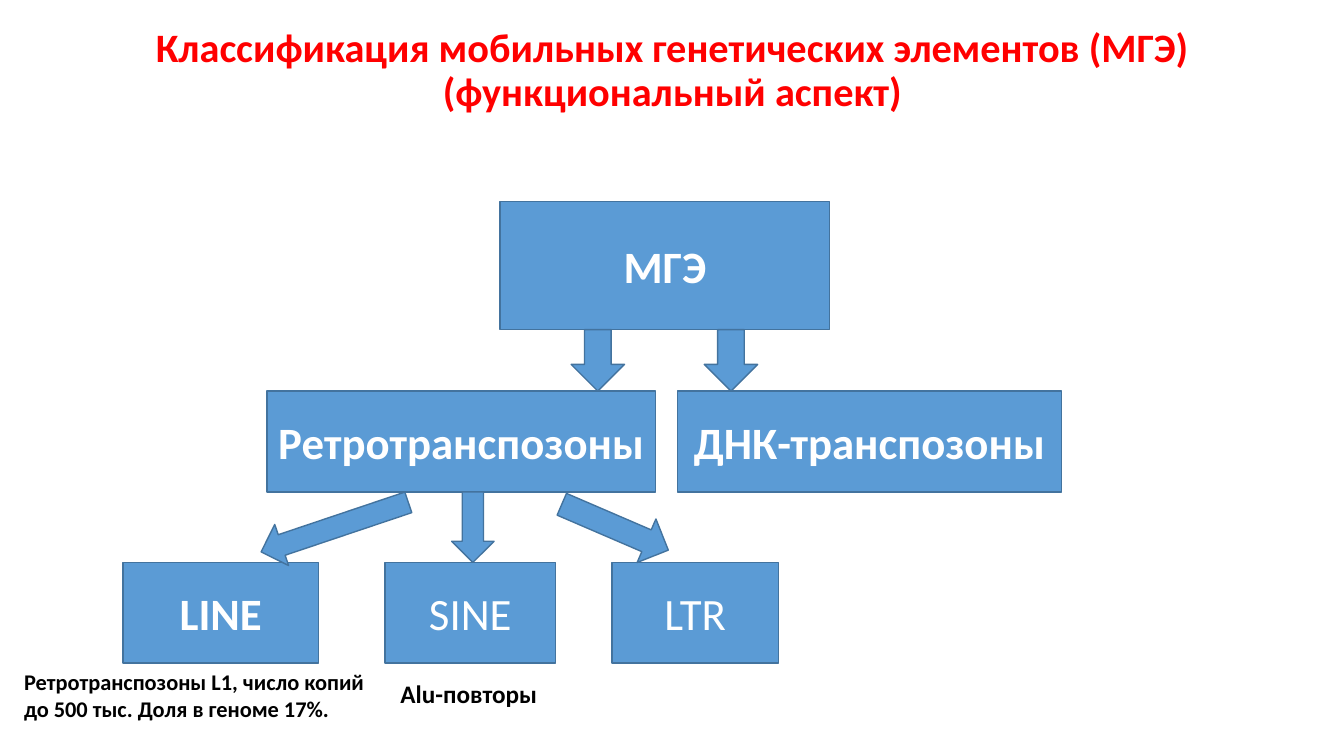
from pptx import Presentation
from pptx.dml.color import RGBColor
from pptx.enum.shapes import MSO_SHAPE as Shape
from pptx.enum.text import MSO_ANCHOR as Anchor, PP_ALIGN as Align
from pptx.util import Inches, Pt

# Content
TITLE = "Классификация мобильных генетических элементов (МГЭ)\v(функциональный аспект)"
ROWS = [  # top, height, boxes as (text, left, width, bold)
    (2, 1.27, [("МГЭ", 4.96, 3.27, True)]),
    (3.88, 1, [("Ретротранспозоны", 2.65, 3.85, True),
               ("ДНК-транспозоны", 6.72, 3.81, True)]),
    (5.58, 1, [("LINE", 1.22, 1.94, True),
               ("SINE", 3.82, 1.69, False),
               ("LTR", 6.07, 1.65, False)]),
]
ARROWS = [  # per gap between rows: centre x, width, length (None fills the gap), rotation
    [(5.93, 0.53, None, 0), (7.25, 0.53, None, 0)],
    [(3.32, 0.43, 1.54, 71.4), (4.69, 0.42, None, 0), (6.1, 0.47, 1.15, 293.3)],
]
NOTES = [  # text, position and size, font size, alignment
    ("Ретротранспозоны L1, число копий до 500 тыс. Доля в геноме 17%.",
     (0.14, 6.58, 3.78, 0.64), 16, Align.LEFT),
    ("Alu-повторы", (3.71, 6.68, 1.88, 0.4), 18, Align.CENTER),
]
BLUE, EDGE, RED, WHITE, BLACK = "5B9BD5", "43739E", "FF0000", "FFFFFF", "000000"


def color(value):
    return RGBColor.from_string(value)


def write(shape, text, size=32, fill=WHITE, bold=True, align=Align.CENTER,
          anchor=Anchor.MIDDLE, spacing=None):
    frame = shape.text_frame
    frame.word_wrap = True
    frame.vertical_anchor = anchor
    frame.text = text
    paragraph = frame.paragraphs[0]
    paragraph.alignment = align
    paragraph.line_spacing = spacing
    for run in paragraph.runs:
        run.font.name = "Calibri"
        run.font.size = Pt(size)
        run.font.bold = bold
        run.font.color.rgb = color(fill)


def add_block(slide, kind, *bounds):
    shape = slide.shapes.add_shape(kind, *map(Inches, bounds))
    shape.shadow.inherit = False
    shape.fill.solid()
    shape.fill.fore_color.rgb = color(BLUE)
    shape.line.color.rgb = color(EDGE)
    shape.line.width = Pt(1)
    return shape


def main():
    presentation = Presentation()
    presentation.slide_width = Inches(13.33)
    presentation.slide_height = Inches(7.5)
    slide = presentation.slides.add_slide(presentation.slide_layouts[5])

    # Title
    title = slide.shapes.title
    title.left, title.top, title.width, title.height = map(Inches, (0.92, 0.12, 11.5, 1.18))
    write(title, TITLE, size=28.8, fill=RED, spacing=0.9)

    # Boxes of the hierarchy
    for top, height, boxes in ROWS:
        for text, left, width, bold in boxes:
            write(add_block(slide, Shape.RECTANGLE, left, top, width, height), text, bold=bold)

    # Arrows, each centred in the gap between two rows
    for upper, lower, arrows in zip(ROWS, ROWS[1:], ARROWS):
        start, end = upper[0] + upper[1], lower[0]
        for center, width, length, angle in arrows:
            length = length or end - start
            arrow = add_block(slide, Shape.DOWN_ARROW, center - width / 2,
                              (start + end - length) / 2, width, length)
            arrow.rotation = angle

    # Notes under the bottom row
    for text, bounds, size, align in NOTES:
        note = slide.shapes.add_textbox(*map(Inches, bounds))
        write(note, text, size=size, fill=BLACK, align=align, anchor=Anchor.TOP)

    presentation.save("out.pptx")


if __name__ == "__main__":
    main()
